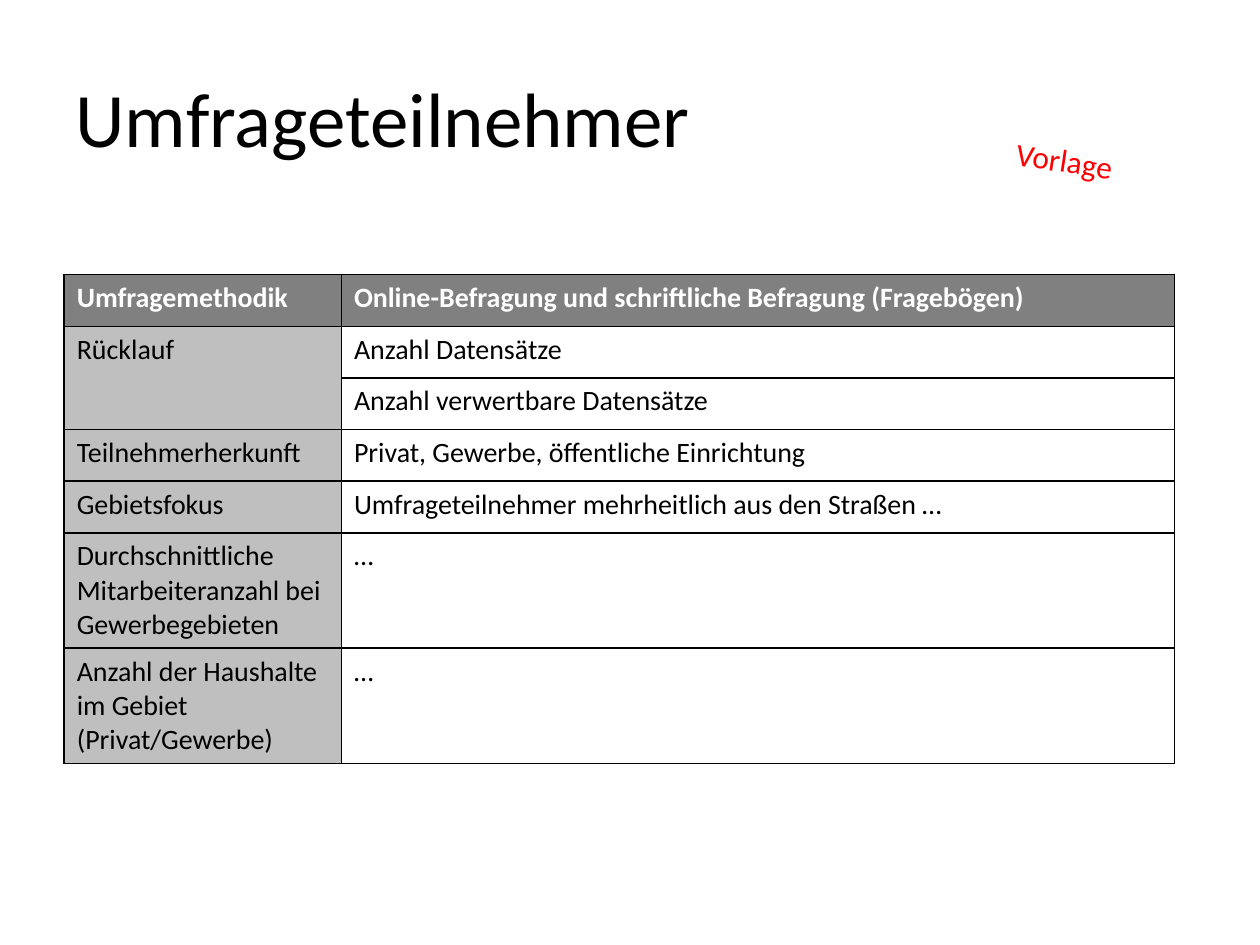
from lxml.etree import SubElement
from pptx import Presentation
from pptx.dml.color import RGBColor
from pptx.enum.text import MSO_ANCHOR, MSO_AUTO_SIZE, PP_ALIGN
from pptx.oxml.ns import qn
from pptx.util import Inches, Pt

FONT = "Calibri"
BLACK, WHITE, RED = "000000", "FFFFFF", "FF0000"
HEADER_GREY, LABEL_GREY = "808080", "BFBFBF"

COLUMN_WIDTHS = (2.2, 6.61)
ROW_HEIGHT = 0.41
ROWS = [
    ("Umfragemethodik", "Online-Befragung und schriftliche Befragung (Fragebögen)"),
    ("Rücklauf", "Anzahl Datensätze"),
    ("", "Anzahl verwertbare Datensätze"),  # label merged with the row above
    ("Teilnehmerherkunft", "Privat, Gewerbe, öffentliche Einrichtung"),
    ("Gebietsfokus", "Umfrageteilnehmer mehrheitlich aus den Straßen …"),
    ("Durchschnittliche Mitarbeiteranzahl bei Gewerbegebieten", "…"),
    ("Anzahl der Haushalte im Gebiet (Privat/Gewerbe)", "…"),
]


def color(hex_value):
    return RGBColor.from_string(hex_value)


def write(frame, text, size, hex_value, bold=False, align=PP_ALIGN.LEFT):
    frame.text = text
    para = frame.paragraphs[0]
    para.alignment = align
    para.font.name = FONT
    para.font.size = Pt(size)
    para.font.bold = bold
    para.font.color.rgb = color(hex_value)


def place(shape, left, top, width, height):
    shape.left, shape.top = Inches(left), Inches(top)
    shape.width, shape.height = Inches(width), Inches(height)


def add_title(page, text):
    title = page.shapes.title
    place(title, 0.5, 0.3, 9, 1.25)
    title.text_frame.vertical_anchor = MSO_ANCHOR.MIDDLE
    write(title.text_frame, text, 44, BLACK)


def set_borders(cell, hex_value, width):
    properties = cell._tc.get_or_add_tcPr()
    for side in ("lnL", "lnR", "lnT", "lnB"):
        line = SubElement(properties, qn(f"a:{side}"), w=str(Pt(width)))
        fill = SubElement(line, qn("a:solidFill"))
        SubElement(fill, qn("a:srgbClr"), val=hex_value)


def style_cell(cell, fill):
    set_borders(cell, BLACK, 1)
    if fill:
        cell.fill.solid()
        cell.fill.fore_color.rgb = color(fill)
    else:
        cell.fill.background()


def add_survey_table(page):
    table = page.shapes.add_table(
        len(ROWS), len(COLUMN_WIDTHS), Inches(0.51), Inches(2.18),
        Inches(sum(COLUMN_WIDTHS)), Inches(ROW_HEIGHT * len(ROWS))).table
    for column, width in zip(table.columns, COLUMN_WIDTHS):
        column.width = Inches(width)
    for row in table.rows:
        row.height = Inches(ROW_HEIGHT)
    for r, texts in enumerate(ROWS):
        header = r == 0
        fills = (HEADER_GREY, HEADER_GREY) if header else (LABEL_GREY, None)
        for c, (text, fill) in enumerate(zip(texts, fills)):
            cell = table.cell(r, c)
            style_cell(cell, fill)
            write(cell.text_frame, text, 16, WHITE if header else BLACK, header)
    table.cell(1, 0).merge(table.cell(2, 0))


def add_stamp(page, text):
    box = page.shapes.add_textbox(0, 0, 0, 0)
    place(box, 7.78, 1.07, 1.34, 0.4)
    box.rotation = 8.6
    box.text_frame.word_wrap = True
    box.text_frame.auto_size = MSO_AUTO_SIZE.SHAPE_TO_FIT_TEXT
    write(box.text_frame, text, 18, RED, align=PP_ALIGN.CENTER)


def main():
    deck = Presentation()
    deck.slide_width, deck.slide_height = Inches(10), Inches(7.5)
    page = deck.slides.add_slide(deck.slide_layouts[5])  # title only
    add_title(page, "Umfrageteilnehmer")
    add_survey_table(page)
    add_stamp(page, "Vorlage")
    deck.save("out.pptx")


if __name__ == "__main__":
    main()
